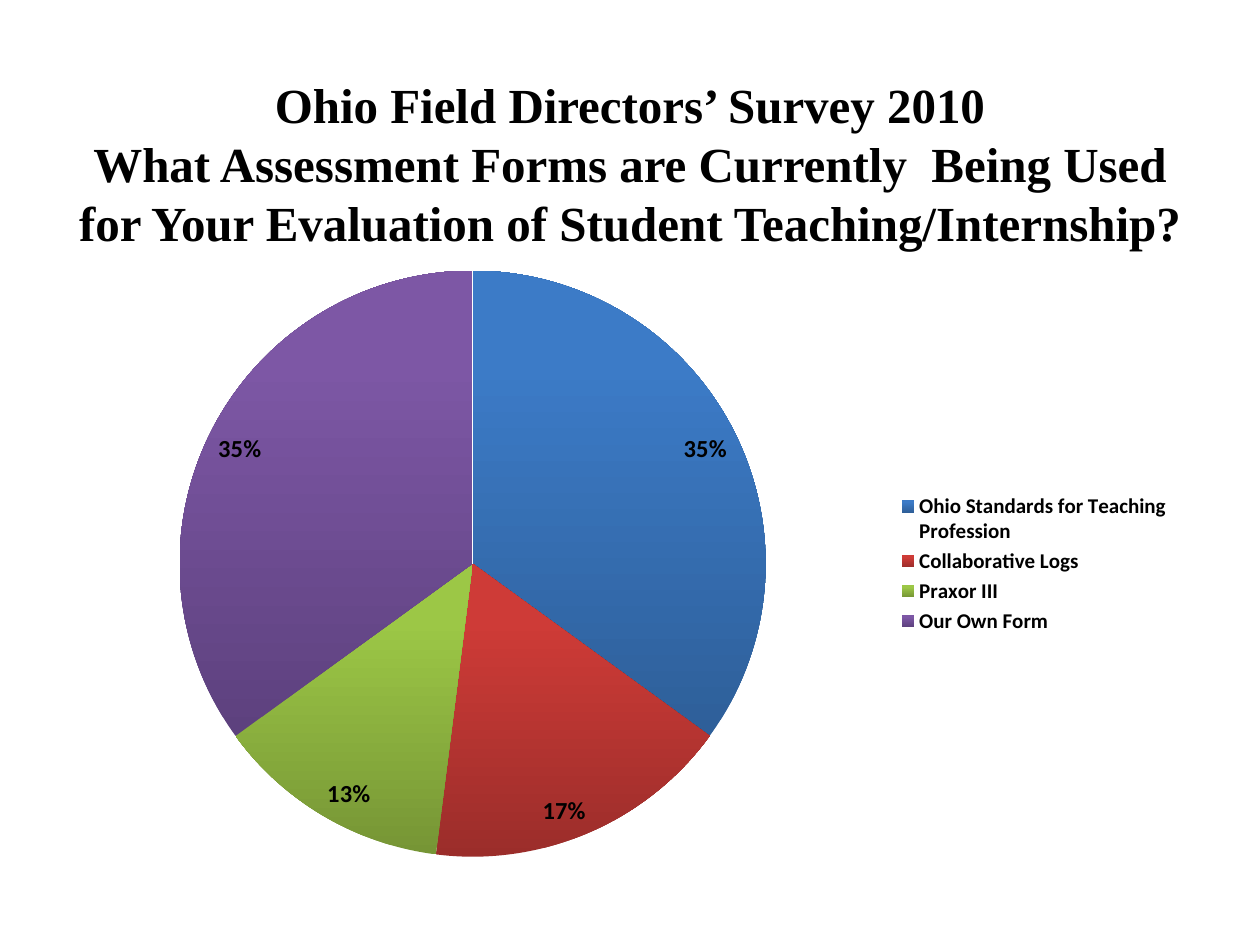
from lxml import etree
from pptx import Presentation
from pptx.chart.data import CategoryChartData
from pptx.dml.color import RGBColor
from pptx.enum.chart import XL_CHART_TYPE as ChartType, XL_LABEL_POSITION as LabelPos
from pptx.enum.chart import XL_LEGEND_POSITION as LegendPos
from pptx.enum.text import MSO_ANCHOR as Anchor, PP_ALIGN as Align
from pptx.oxml import parse_xml
from pptx.util import Cm, Pt


def style_font(font, size, color="000000", name="Calibri", bold=True):
    font.size, font.name, font.bold = Pt(size), name, bold
    font.color.rgb = RGBColor.from_string(color)


def set_layout(element, target, x, y, w, h):
    """Place a plot area or legend by fractions of the chart's size."""
    ns = "http://schemas.openxmlformats.org/drawingml/2006/chart"
    for old in element.findall(f"{{{ns}}}layout"):
        element.remove(old)
    inner = '<c:layoutTarget val="inner"/>' if target == "plot" else ""
    layout = parse_xml(
        f'<c:layout xmlns:c="{ns}"><c:manualLayout>{inner}'
        '<c:xMode val="edge"/><c:yMode val="edge"/>'
        f'<c:x val="{x}"/><c:y val="{y}"/><c:w val="{w}"/><c:h val="{h}"/>'
        '</c:manualLayout></c:layout>')
    element.insert(0 if target == "plot" else 1, layout)


prs = Presentation()
prs.slide_width, prs.slide_height = Cm(25.4), Cm(19.05)
slide = prs.slides.add_slide(prs.slide_layouts[6])

# Title
title = slide.shapes.add_textbox(Cm(1.27), Cm(1.7), Cm(22.86), Cm(3.18)).text_frame
title.word_wrap = True
title.vertical_anchor = Anchor.MIDDLE
heading = title.paragraphs[0]
heading.text = ("Ohio Field Directors’ Survey 2010\n"
                "What Assessment Forms are Currently  Being Used "
                "for Your Evaluation of Student Teaching/Internship?")
heading.alignment = Align.CENTER
heading.line_spacing = Pt(33.7)
for run in heading.runs:
    style_font(run.font, 28, name="Times New Roman")

# Share of each assessment form: name, percent, dark and light shade
forms = [
    ("Ohio Standards for Teaching Profession", 35, "2E5F99", "3C7BC7"),
    ("Collaborative Logs", 17, "9B2D2A", "CE3B37"),
    ("Praxor III", 13, "769535", "9CC746"),
    ("Our Own Form", 35, "5D417E", "7D57A5"),
]
survey = CategoryChartData()
survey.categories = [form[0] for form in forms]
survey.add_series("Series 1", [form[1] for form in forms])
pie = slide.shapes.add_chart(ChartType.PIE, Cm(1.07), Cm(5.08), Cm(22.86), Cm(12.57),
                             survey).chart
pie.has_title = False
style_font(pie.font, 10, bold=False)

plot = pie.plots[0]
plot.vary_by_categories = True
for index, (_, _, dark, light) in enumerate(forms):
    fill = plot.series[0].points[index].format.fill
    fill.gradient()
    fill.gradient_angle = 90
    for stop, shade, position in zip(fill.gradient_stops, (dark, light), (0, 0.8)):
        stop.color.rgb = RGBColor.from_string(shade)
        stop.position = position

plot.has_data_labels = True
labels = plot.data_labels
labels.show_percentage, labels.show_value = True, False
labels.number_format, labels.number_format_is_linked = "0%", False
labels.position = LabelPos.INSIDE_END
style_font(labels.font, 14)

pie.has_legend = True
legend = pie.legend
legend.position = LegendPos.RIGHT
legend.include_in_layout = False
style_font(legend.font, 12)

plot_area = pie.element.chart.plotArea
set_layout(plot_area, "plot", 0.11, 0.03, 0.52, 0.94)
set_layout(pie.element.chart.find("{*}legend"), "legend", 0.74, 0.38, 0.25, 0.24)

prs.save("out.pptx")
